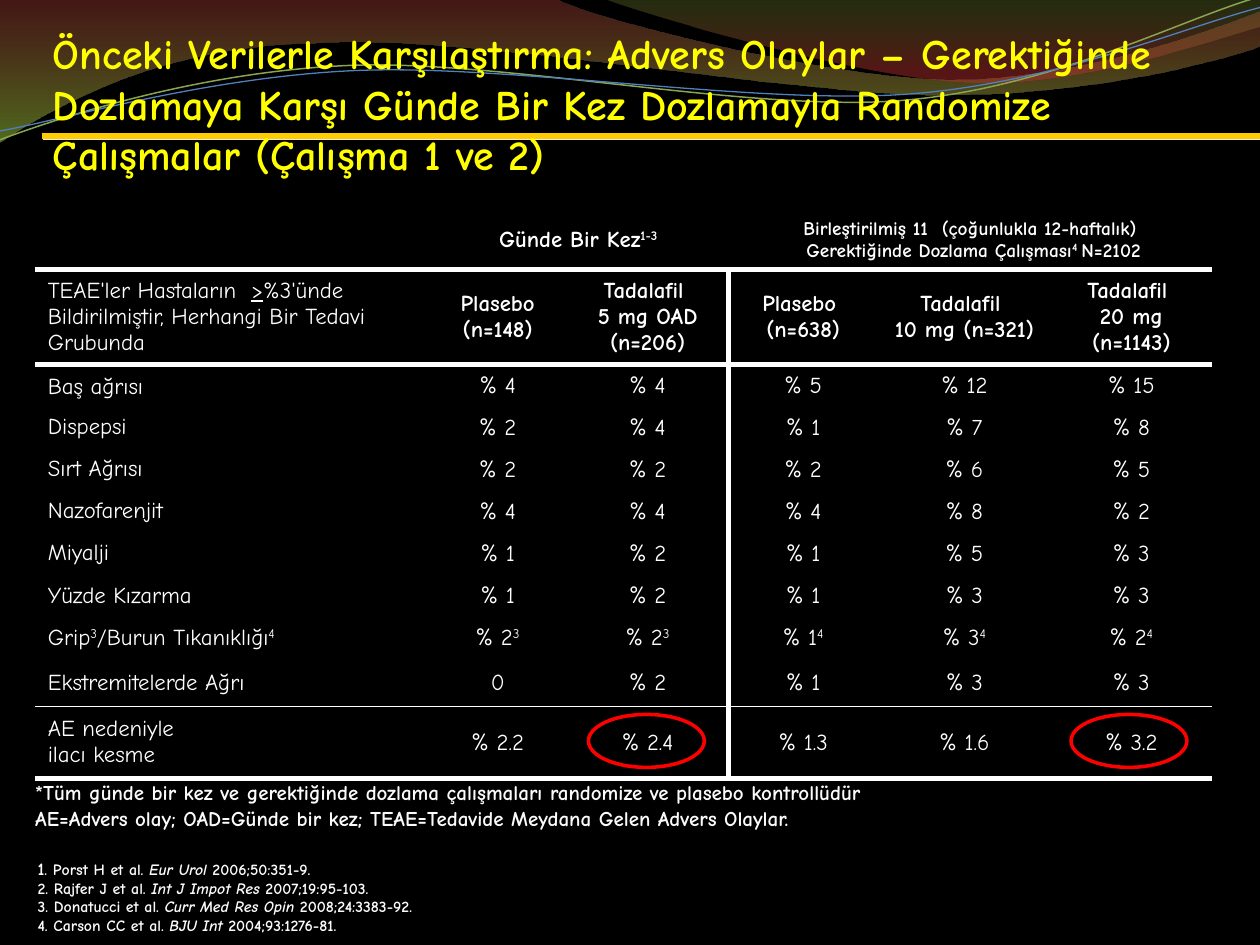
import math

from lxml import etree
from pptx import Presentation
from pptx.dml.color import RGBColor
from pptx.enum import shapes, text
from pptx.oxml import parse_xml
from pptx.oxml.ns import nsdecls, qn
from pptx.util import Inches, Pt

FONT = "Comic Neue"
BLACK = RGBColor(0, 0, 0)
WHITE = RGBColor(255, 255, 255)
PALE = RGBColor(0xFA, 0xFA, 0xFA)
YELLOW = RGBColor(255, 255, 0)
GOLD = RGBColor(0xFF, 0xCC, 0)
RED = RGBColor(255, 0, 0)
RUST = RGBColor(0x97, 0x33, 0x30)
LIME = RGBColor(0x95, 0xC2, 0x38)
MOSS = RGBColor(0x76, 0x95, 0x37)
BRICK = RGBColor(0xBE, 0x33, 0x30)
OLIVE = RGBColor(0x89, 0xA5, 0x4F)
BLUE = RGBColor(0x4F, 0x81, 0xBD)

# A path is a start point, then lines (x, y) and curves (two controls, end).
BANDS = [
    ([(0, -.01), (4.4, -.01), (4.76, .17, 6.64, .63, 7.58, .63),
      (8.53, .63, 9.58, .26, 10, .09), (10.01, .36),
      (9.83, .44, 8.7, .76, 7.46, .75), (6.22, .75, 3.82, .28, 2.57, .34),
      (1.29, .35, .46, .83, -.01, 1.13)],
     [(0, RUST, 45), (1, LIME, 55)]),
    ([(4.79, -.01), (5.09, .11, 6.82, .62, 7.69, .65),
      (8.56, .69, 9.61, .32, 10, .21), (10, 0)],
     [(0, MOSS, 30), (.8, BRICK, 45)]),
]
WAVES = [
    ([(0, 1.11), (.48, .93, 1.58, .57, 2.77, .52),
      (3.95, .47, 5.93, .89, 7.13, .8), (8.33, .71, 9.38, .15, 9.98, -.02)],
     OLIVE, .85),
    ([(0, 1.04), (.47, .96, 1.64, .61, 2.83, .56),
      (4.03, .51, 5.97, .83, 7.17, .75), (8.36, .67, 9.41, .21, 10, .06)],
     BLUE, .75),
]
TILT = -2.7          # degrees the waves are turned
PIVOT = (5, .58)

TITLE = ("Önceki Verilerle Karşılaştırma: Advers Olaylar – Gerektiğinde "
         "Dozlamaya Karşı Günde Bir Kez Dozlamayla Randomize Çalışmalar "
         "(Çalışma 1 ve 2)")

# Rich text is a list of (words, style); style is "", "sup", "u" or "i".
GROUPS = [
    (1, 2, 13, [("Günde Bir Kez", ""), ("1-3", "sup")]),
    (3, 5, 11, [("Birleştirilmiş 11  (çoğunlukla 12-haftalık)\n"
                 " Gerektiğinde Dozlama Çalışması", ""),
                ("4 ", "sup"), ("N=2102", "")]),
]
HEAD = [
    [("TEAE'ler Hastaların  ", ""), (">", "u"),
     ("%3'ünde Bildirilmiştir, Herhangi Bir Tedavi Grubunda", "")],
    "Plasebo\n(n=148)", "Tadalafil \n5 mg OAD (n=206)", "Plasebo \n(n=638)",
    "Tadalafil \n10 mg (n=321)", "Tadalafil \n20 mg (n=1143)",
]
GRIP = [("Grip", ""), ("3", "sup"), ("/Burun Tıkanıklığı", ""), ("4", "sup")]
BODY = [
    ("Baş ağrısı", "4 4 5 12 15"),
    ("Dispepsi", "2 4 1 7 8"),
    ("Sırt Ağrısı", "2 2 2 6 5"),
    ("Nazofarenjit", "4 4 4 8 2"),
    ("Miyalji", "1 2 1 5 3"),
    ("Yüzde Kızarma", "1 2 1 3 3"),
    (GRIP, "2^3 2^3 1^4 3^4 2^4"),
    ("Ekstremitelerde Ağrı", "0 2 1 3 3"),
    ("AE nedeniyle \nilacı kesme", "2.2 2.4 1.3 1.6 3.2"),
]
COLS = [3.12, 1.1, 1.28, 1.19, 1.37, 1.28]
ROWS = [.47, .75] + [1 / 3] * 7 + [.38, .57]
RULES = {0: 3, 1: 3, 9: 1, 10: 3}  # points under each ruled row
SPLIT = 3                          # the upright rule stands left of this column

NOTES = [
    "*Tüm günde bir kez ve gerektiğinde dozlama çalışmaları randomize ve "
    "plasebo kontrollüdür",
    "AE=Advers olay; OAD=Günde bir kez; TEAE=Tedavide Meydana Gelen Advers "
    "Olaylar.",
]
REFS = [
    [("1", ""), (". Porst H et al. ", ""), ("Eur Urol", "i"),
     (" 2006;50:351-9.", "")],
    [("2. Rajfer J et al. ", ""), ("Int J Impot Res", "i"),
     (" 2007;19:95-103.", "")],
    [("3. Donatucci et al. ", ""), ("Curr Med Res Opin", "i"),
     (" 2008;24:3383-92.", "")],
    [("4. Carson CC et al. ", ""), ("BJU Int ", "i"),
     ("2004;93:1276-81.", "")],
]


def write(para, rich, size, color, bold=False):
    for words, style in [(rich, "")] if isinstance(rich, str) else rich:
        for i, line in enumerate(words.split("\n")):
            if i:
                para.add_line_break()
            run = para.add_run()
            run.text = line
            if style == "sup":
                run.font._element.set("baseline", "30000")
            elif style == "u":
                run.font.underline = True
            elif style == "i":
                run.font.italic = True
    font = para.font
    font.name, font.size, font.bold = FONT, Pt(size), bold
    font.color.rgb = color


def add_box(slide, x, y, w, h, paras, size, color, pad=(0, 0, 0, 0)):
    box = slide.shapes.add_textbox(*map(Inches, (x, y, w, h)))
    frame = box.text_frame
    frame.word_wrap = True
    (frame.margin_left, frame.margin_top,
     frame.margin_right, frame.margin_bottom) = map(Inches, pad)
    for i, rich in enumerate(paras):
        para = frame.add_paragraph() if i else frame.paragraphs[0]
        write(para, rich, size, color, True)
    return frame


def turn(point):
    """Undo the tilt of a point about the pivot."""
    a = math.radians(-TILT)
    x, y = point[0] - PIVOT[0], point[1] - PIVOT[1]
    return (PIVOT[0] + x * math.cos(a) - y * math.sin(a),
            PIVOT[1] + x * math.sin(a) + y * math.cos(a))


def trace(slide, path, close, tilt=0):
    """Draw a path: lay every point as a line, then join triples to curves."""
    points = [p for step in path for p in zip(step[::2], step[1::2])]
    if tilt:
        points = [turn(p) for p in points]
    points = [(Inches(x), Inches(y)) for x, y in points]
    pen = slide.shapes.build_freeform(*points[0])
    pen.add_line_segments(points[1:], close=close)
    shape = pen.convert_to_shape()
    lines = iter(list(shape._element.iter(qn("a:lnTo"))))
    for step in path[1:]:
        first = next(lines)
        if len(step) == 6:
            curve = etree.Element(qn("a:cubicBezTo"))
            first.addprevious(curve)
            for line in (first, next(lines), next(lines)):
                curve.append(line[0])
                line.getparent().remove(line)
    shape.rotation = tilt
    shape.shadow.inherit = False
    return shape


def add_decor(slide):
    for path, stops in BANDS:
        band = trace(slide, path, True)
        band.line.fill.background()
        band.fill.gradient()
        band.fill.gradient_angle = 270
        for stop, (place, color, alpha) in zip(band.fill.gradient_stops, stops):
            stop.position, stop.color.rgb = place, color
            tint = stop._gs.find(qn("a:srgbClr"))
            etree.SubElement(tint, qn("a:alpha"), val=str(alpha * 1000))
    for path, color, width in WAVES:
        wave = trace(slide, path, False, TILT)
        wave.fill.background()
        wave.line.color.rgb, wave.line.width = color, Pt(width)
    rule = slide.shapes.add_connector(
        shapes.MSO_CONNECTOR.STRAIGHT, *map(Inches, (.33, 1.08, 10, 1.08)))
    rule.line.color.rgb, rule.line.width = GOLD, Pt(3)
    rule._element.spPr.append(parse_xml(
        f'<a:effectLst {nsdecls("a")}><a:outerShdw dist="{Pt(1.4)}" '
        'dir="2700000" algn="ctr" rotWithShape="0">'
        '<a:srgbClr val="EEECE1"/></a:outerShdw></a:effectLst>'))


def edge(cell, sides):
    """Set cell borders; sides maps L, R, T, B to points, 0 for none."""
    props = cell._tc.get_or_add_tcPr()
    for i, (side, width) in enumerate(sides.items()):
        paint = (f'<a:solidFill><a:srgbClr val="{WHITE}"/></a:solidFill>'
                 if width else '<a:noFill/>')
        props.insert(i, parse_xml(
            f'<a:ln{side} {nsdecls("a")} w="{Pt(width)}">{paint}</a:ln{side}>'))


def fill_value(para, value):
    main, _, sup = value.partition("^")
    if main == "0":
        write(para, main, 13, WHITE)
        return
    write(para, [("%", ""), (" " + main, "")] + ([(sup, "sup")] if sup else []),
          13, WHITE)
    para.runs[0].font.size = Pt(14)


def add_grid(slide):
    table = slide.shapes.add_table(
        len(ROWS), len(COLS),
        *map(Inches, (.28, 1.67, sum(COLS), sum(ROWS)))).table
    table.first_row = table.horz_banding = False
    style = table._tbl.tblPr.find(qn("a:tableStyleId"))
    style.text = "{2D5ABB26-0587-4C30-8999-92F81FD0307C}"  # no style, no grid
    for col, width in zip(table.columns, COLS):
        col.width = Inches(width)
    for row, height in zip(table.rows, ROWS):
        row.height = Inches(height)

    for r in range(len(ROWS)):
        for c in range(len(COLS)):
            cell = table.cell(r, c)
            cell.fill.background()
            cell.vertical_anchor = (text.MSO_ANCHOR.BOTTOM if r == 2
                                    else text.MSO_ANCHOR.MIDDLE)
            edge(cell, {"L": 3 if r and c == SPLIT else 0,
                        "R": 3 if r and c == SPLIT - 1 else 0,
                        "T": RULES.get(r - 1, 0), "B": RULES.get(r, 0)})
            para = cell.text_frame.paragraphs[0]
            if c:
                para.alignment = text.PP_ALIGN.CENTER
            if r == 1:
                write(para, HEAD[c], 13, WHITE, c > 0)
            elif r > 1:
                label, values = BODY[r - 2]
                if c:
                    fill_value(para, values.split()[c - 1])
                else:
                    write(para, label, 13, WHITE)
    for first, last, size, rich in GROUPS:
        cell = table.cell(0, first)
        cell.merge(table.cell(0, last))
        write(cell.text_frame.paragraphs[0], rich, size, WHITE, True)


def main():
    deck = Presentation()
    deck.slide_width, deck.slide_height = Inches(10), Inches(7.5)
    slide = deck.slides.add_slide(deck.slide_layouts[6])
    slide.background.fill.solid()
    slide.background.fill.fore_color.rgb = BLACK
    add_decor(slide)
    title = add_box(slide, .42, .17, 9.16, 1.25, [TITLE], 24, YELLOW,
                    (0, .05, 0, 0))
    title.vertical_anchor = text.MSO_ANCHOR.BOTTOM
    add_grid(slide)
    notes = add_box(slide, .28, 6.19, 9.1, .4, NOTES, 12, PALE)
    for para in notes.paragraphs:
        props = para._p.get_or_add_pPr()
        props.set("marL", str(Inches(.19)))
        props.set("indent", str(-Inches(.19)))
    refs = add_box(slide, .2, 6.76, 4.01, .72, REFS, 9, PALE,
                   (.1, .05, .1, .05))
    refs.paragraphs[0].runs[0].font.size = Pt(10)
    refs.paragraphs[2].line_spacing = .95
    for frame in (notes, refs):
        frame.auto_size = text.MSO_AUTO_SIZE.SHAPE_TO_FIT_TEXT
    for x in (4.67, 8.5):
        ring = slide.shapes.add_shape(
            shapes.MSO_SHAPE.OVAL, *map(Inches, (x, 5.67, .92, .42)))
        ring.shadow.inherit = False
        ring.fill.background()
        ring.line.color.rgb, ring.line.width = RED, Pt(2)
    deck.save("out.pptx")


if __name__ == "__main__":
    main()
